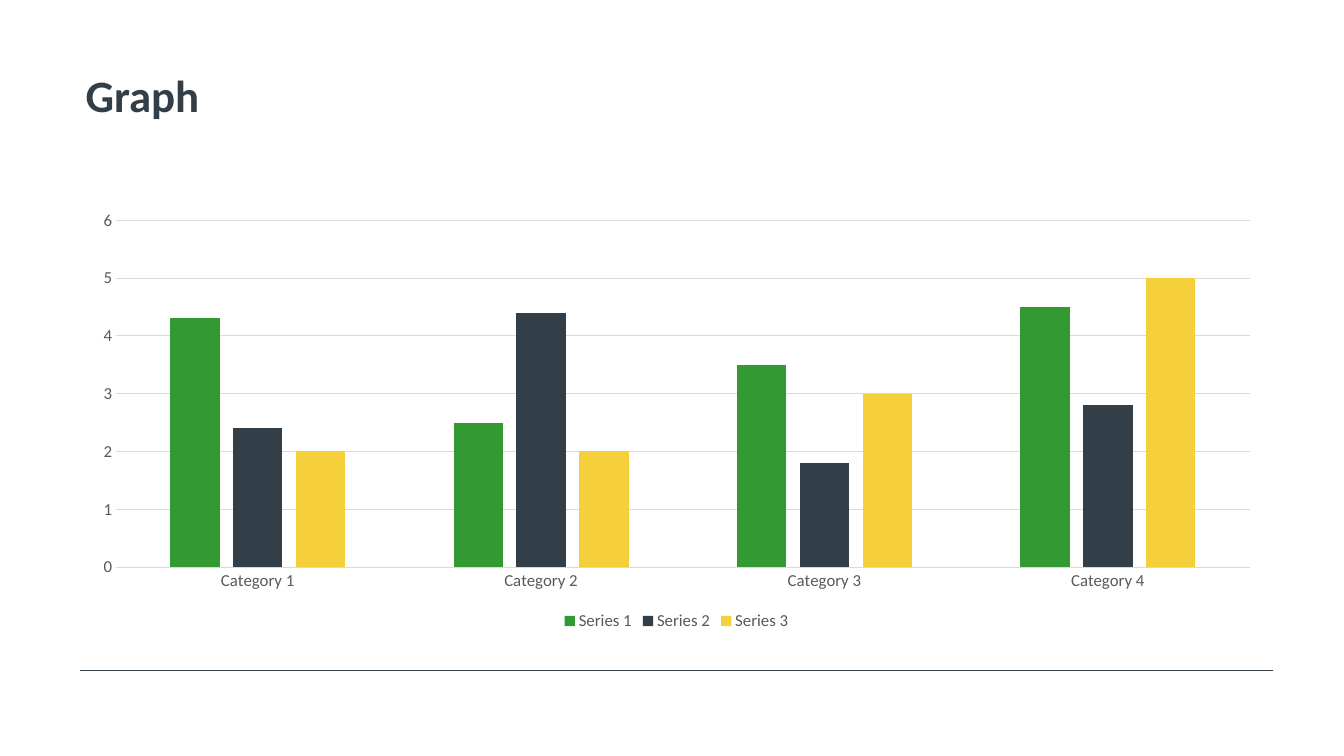
"""Build a slide with a title, a clustered column chart and a footer rule."""
import dataclasses

import pptx
import pptx.chart.data
import pptx.dml.color
import pptx.enum.chart
import pptx.enum.shapes
import pptx.enum.text
import pptx.oxml.xmlchemy
import pptx.util
from pptx.util import Inches


@dataclasses.dataclass(frozen=True)
class Theme:
    font: str = "Calibri"
    ink: str = "323E48"
    label: str = "595959"
    grid: str = "D9D9D9"
    series: tuple = ("339933", "323E48", "F6D03A")
    title_size: int = 32
    label_size: int = 12
    rule_width: float = 0.5
    grid_width: float = 0.75


THEME = Theme()
CATEGORIES = [f"Category {number}" for number in range(1, 5)]
SERIES = {
    "Series 1": (4.3, 2.5, 3.5, 4.5),
    "Series 2": (2.4, 4.4, 1.8, 2.8),
    "Series 3": (2, 2, 3, 5),
}


def style_font(font, size, color, bold=False):
    font.name = THEME.font
    font.size = pptx.util.Pt(size)
    font.bold = bold
    font.color.rgb = pptx.dml.color.RGBColor.from_string(color)


def style_line(line, width, color):
    line.width = pptx.util.Pt(width)
    line.color.rgb = pptx.dml.color.RGBColor.from_string(color)


def add_title(page, text, left, top, width, height):
    box = page.shapes.add_textbox(Inches(left), Inches(top), Inches(width), Inches(height))
    frame = box.text_frame
    frame.word_wrap = True
    frame.vertical_anchor = pptx.enum.text.MSO_ANCHOR.TOP
    frame.text = text
    para = frame.paragraphs[0]
    para.line_spacing = 0.9
    style_font(para.runs[0].font, THEME.title_size, THEME.ink, bold=True)


def add_rule(page, left, right, top):
    rule = page.shapes.add_connector(
        pptx.enum.shapes.MSO_CONNECTOR.STRAIGHT,
        Inches(left), Inches(top), Inches(right), Inches(top),
    )
    style_line(rule.line, THEME.rule_width, THEME.ink)
    rule.element.spPr.append(pptx.oxml.xmlchemy.OxmlElement("a:effectLst"))


def style_axes(chart):
    for axis in (chart.category_axis, chart.value_axis):
        axis.major_tick_mark = pptx.enum.chart.XL_TICK_MARK.NONE
        axis.minor_tick_mark = pptx.enum.chart.XL_TICK_MARK.NONE
        style_font(axis.tick_labels.font, THEME.label_size, THEME.label)
    style_line(chart.category_axis.format.line, THEME.grid_width, THEME.grid)
    chart.value_axis.format.line.fill.background()
    chart.value_axis.has_major_gridlines = True
    style_line(chart.value_axis.major_gridlines.format.line, THEME.grid_width, THEME.grid)


def add_column_chart(page, left, top, width, height):
    data = pptx.chart.data.CategoryChartData()
    data.categories = CATEGORIES
    for name, values in SERIES.items():
        data.add_series(name, values)
    chart = page.shapes.add_chart(
        pptx.enum.chart.XL_CHART_TYPE.COLUMN_CLUSTERED,
        Inches(left), Inches(top), Inches(width), Inches(height), data,
    ).chart
    chart.has_title = False
    style_font(chart.font, THEME.label_size, THEME.label)
    style_axes(chart)
    chart.has_legend = True
    chart.legend.position = pptx.enum.chart.XL_LEGEND_POSITION.BOTTOM
    chart.legend.include_in_layout = False
    style_font(chart.legend.font, THEME.label_size, THEME.label)
    plot = chart.plots[0]
    plot.vary_by_categories = False
    plot.gap_width = 219
    plot.overlap = -27
    for series, color in zip(plot.series, THEME.series):
        series.format.fill.solid()
        series.format.fill.fore_color.rgb = pptx.dml.color.RGBColor.from_string(color)


def main():
    deck = pptx.Presentation()
    deck.slide_width = Inches(13.33)
    deck.slide_height = Inches(7.5)
    page = deck.slides.add_slide(deck.slide_layouts[6])
    add_rule(page, 0.79, 12.63, 6.65)
    add_title(page, "Graph", 0.75, 0.68, 11.84, 0.8)
    add_column_chart(page, 0.79, 2, 11.84, 4.3)
    deck.save("out.pptx")


if __name__ == "__main__":
    main()
